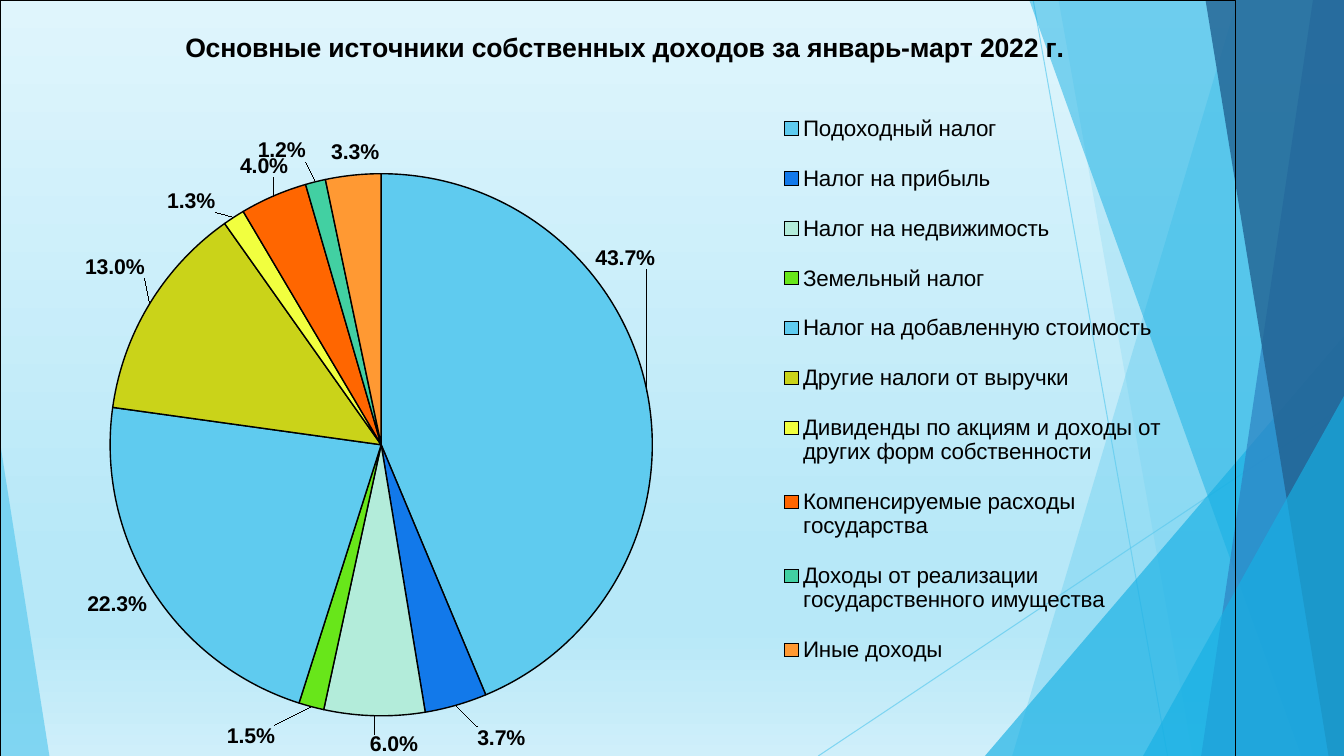
from copy import deepcopy

from lxml.etree import SubElement
from pptx import Presentation
from pptx.chart.data import CategoryChartData
from pptx.dml.color import RGBColor
from pptx.enum.chart import XL_CHART_TYPE as Chart, XL_LABEL_POSITION as LabelPos, XL_LEGEND_POSITION as LegendPos
from pptx.enum.shapes import MSO_CONNECTOR as Connector, MSO_SHAPE as Shape
from pptx.oxml import parse_xml
from pptx.oxml.ns import nsdecls, qn
from pptx.util import Pt

W, H, TOP = 960, 540, -0.6
CHART_W = 882.5
FONT = "Arial"
C = {"black": "000000", "sky": "5FCBEF", "cyan": "17B0E4", "blue": "2E83C3", "navy": "226292",
     "royal": "1279EA", "mint": "B3ECDA", "green": "68E61A", "olive": "CAD319", "yellow": "F1FF3F",
     "red": "FF6600", "teal": "42D0A2", "orange": "FF9933",
     "bg_top": "DFF5FC", "bg_mid": "B7E8F8", "bg_low": "CFEFFA"}
BACKGROUND = [(0, "bg_top"), (0.74, "bg_mid"), (0.83, "bg_mid"), (1, "bg_low")]
RAYS = [(738, 0, 834, H), (W, 290, 584.5, H)]
BANDS = [
    ("band", 884, 723, "sky", 36),
    ("band", 756, 852, "sky", 20),
    ("triangle", (703.5, 240, 256.5, 300), 1, "cyan", 66),
    ("band", 735, 929.5, "cyan", 50),
    ("band", 938, 858, "blue", 70),
    ("band", 861, 949, "navy", 80),
    ("triangle", (816.5, 283, 143.5, 257), 1, "cyan", 66),
    ("triangle", (0, 316, 35.3, 224), 0, "sky", 70),
]
TITLE = "Основные источники собственных доходов за январь-март 2022 г."
INCOME = [
    ("Подоходный налог", 43.7, "sky", (-41, -86)),
    ("Налог на прибыль", 3.7, "royal", (14, 11)),
    ("Налог на недвижимость", 6, "mint", (14, 9)),
    ("Земельный налог", 1.5, "green", (-25, 9)),
    ("Налог на добавленную стоимость", 22.3, "sky", None),
    ("Другие налоги от выручки", 13, "olive", (0, -16)),
    ("Дивиденды по акциям и доходы от других форм собственности", 1.3, "yellow", (-11, 0)),
    ("Компенсируемые расходы государства", 4, "red", (12, -9)),
    ("Доходы от реализации государственного имущества", 1.2, "teal", (-6, -10)),
    ("Иные доходы", 3.3, "orange", (19, -4)),
]


def rgb(name):
    return RGBColor.from_string(C[name])


def set_alpha(shape, percent):
    for clr in shape._element.spPr.iter(qn("a:srgbClr")):
        SubElement(clr, qn("a:alpha")).set("val", str(percent * 1000))


def set_font(font, size, bold=False):
    font.name, font.size, font.bold = FONT, Pt(size), bold
    font.color.rgb = rgb("black")


def add_title(chart, text, size=19, bold=True):
    p = chart.chart_title.text_frame.paragraphs[0]
    r = p.add_run()
    r.text = text
    set_font(r.font, size, bold)


def set_layout(parent, after=None, **values):
    for old in parent.findall(qn("c:layout")):
        parent.remove(old)
    order = ("layoutTarget", "xMode", "yMode", "x", "y", "w", "h")
    items = "".join(f'<c:{k} val="{values[k]}"/>' for k in order if k in values)
    layout = parse_xml(f'<c:layout {nsdecls("c")}><c:manualLayout>{items}</c:manualLayout></c:layout>')
    if after:
        parent.find(qn(after)).addnext(layout)
    else:
        parent.insert(0, layout)
    return layout


def paint_background(s):
    fill = s.background.fill
    fill.gradient()
    fill.gradient_angle = 270
    stops = s._element.find(".//" + qn("a:gsLst"))
    while len(stops) < len(BACKGROUND):
        stops.append(deepcopy(stops[0]))
    for stop, (position, color) in zip(fill.gradient_stops, BACKGROUND):
        stop.position = position
        stop.color.rgb = rgb(color)


def add_rays(s):
    for ray in RAYS:
        line = s.shapes.add_connector(Connector.STRAIGHT, *map(Pt, ray))
        line.line.color.rgb = rgb("sky")
        line.line.width = Pt(0.75)
        SubElement(line._element.spPr, qn("a:effectLst"))
        set_alpha(line, 70)


def add_bands(s):
    for kind, a, b, color, alpha in BANDS:
        if kind == "band":
            builder = s.shapes.build_freeform(Pt(a), Pt(TOP))
            builder.add_line_segments([(Pt(x), Pt(y)) for x, y in ((W, TOP), (W, H), (b, H))])
            sp = builder.convert_to_shape()
        else:
            sp = s.shapes.add_shape(Shape.ISOSCELES_TRIANGLE, *map(Pt, a))
            sp.adjustments[0] = b
        sp.shadow.inherit = False
        sp.fill.solid()
        sp.fill.fore_color.rgb = rgb(color)
        sp.line.fill.background()
        set_alpha(sp, alpha)


def place_label(point, offset):
    label = point.data_label
    set_font(label.font, 15.2, True)
    label.position = LabelPos.OUTSIDE_END
    dLbl = label._get_or_add_dLbl()
    for tag, value in (("c:showVal", "0"), ("c:showPercent", "1")):
        dLbl.find(qn(tag)).set("val", value)
    layout = set_layout(dLbl, "c:idx", x=round(offset[0] / CHART_W, 4), y=round(offset[1] / H, 4))
    layout.addnext(parse_xml(f'<c:numFmt {nsdecls("c")} formatCode="0.0%" sourceLinked="0"/>'))


def add_pie(s):
    data = CategoryChartData()
    data.categories = [row[0] for row in INCOME]
    data.add_series("Series 1", [row[1] for row in INCOME])
    chart = s.shapes.add_chart(Chart.PIE, 0, 0, Pt(CHART_W), Pt(H), data).chart
    set_font(chart.font, 15.5)
    add_title(chart, TITLE)
    set_layout(chart.chart_title._element, "c:tx", xMode="edge", yMode="edge", x=0.146, y=0.033)
    chart.has_legend = True
    chart.legend.position = LegendPos.RIGHT
    chart.legend.include_in_layout = False
    set_font(chart.legend.font, 16)
    set_layout(chart.legend._element, "c:legendPos", xMode="edge", yMode="edge",
               x=0.625, y=0.12, w=0.325, h=0.79)
    plot = chart.plots[0]
    plot.vary_by_categories = True
    set_layout(chart._chartSpace.chart.plotArea, layoutTarget="inner", xMode="edge", yMode="edge",
               x=0.089, y=0.208, w=0.439, h=0.761)
    series = plot.series[0]
    labels = series.data_labels
    labels.show_value, labels.show_percentage = False, True
    labels.number_format, labels.number_format_is_linked = "0.0%", False
    labels.position = LabelPos.OUTSIDE_END
    set_font(labels.font, 15.2, True)
    for i, (_, _, color, offset) in enumerate(INCOME):
        point = series.points[i]
        point.format.fill.solid()
        point.format.fill.fore_color.rgb = rgb(color)
        point.format.line.color.rgb = rgb("black")
        point.format.line.width = Pt(1)
        if offset:
            place_label(point, offset)
    border = parse_xml(f'<c:spPr {nsdecls("c", "a")}><a:noFill/><a:ln w="{Pt(0.25)}"><a:solidFill>'
                       f'<a:srgbClr val="{C["black"]}"/></a:solidFill></a:ln></c:spPr>')
    chart._chartSpace.chart.addnext(border)


def main():
    """Build the slide with the pie of own revenue sources."""
    prs = Presentation()
    prs.slide_width, prs.slide_height = Pt(W), Pt(H)
    s = prs.slides.add_slide(prs.slide_layouts[6])
    paint_background(s)
    add_rays(s)
    add_bands(s)
    add_pie(s)
    prs.save("out.pptx")


if __name__ == "__main__":
    main()
